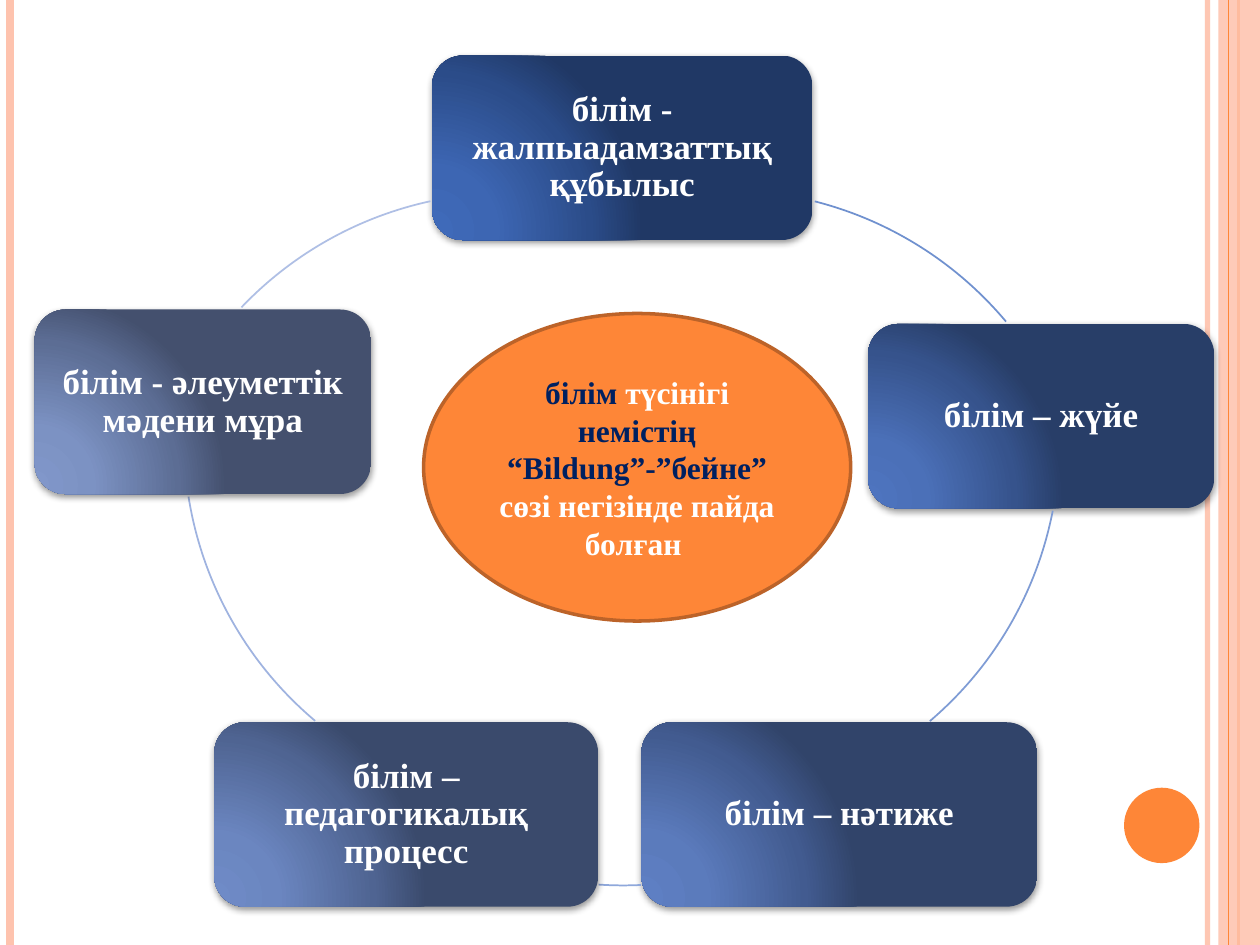
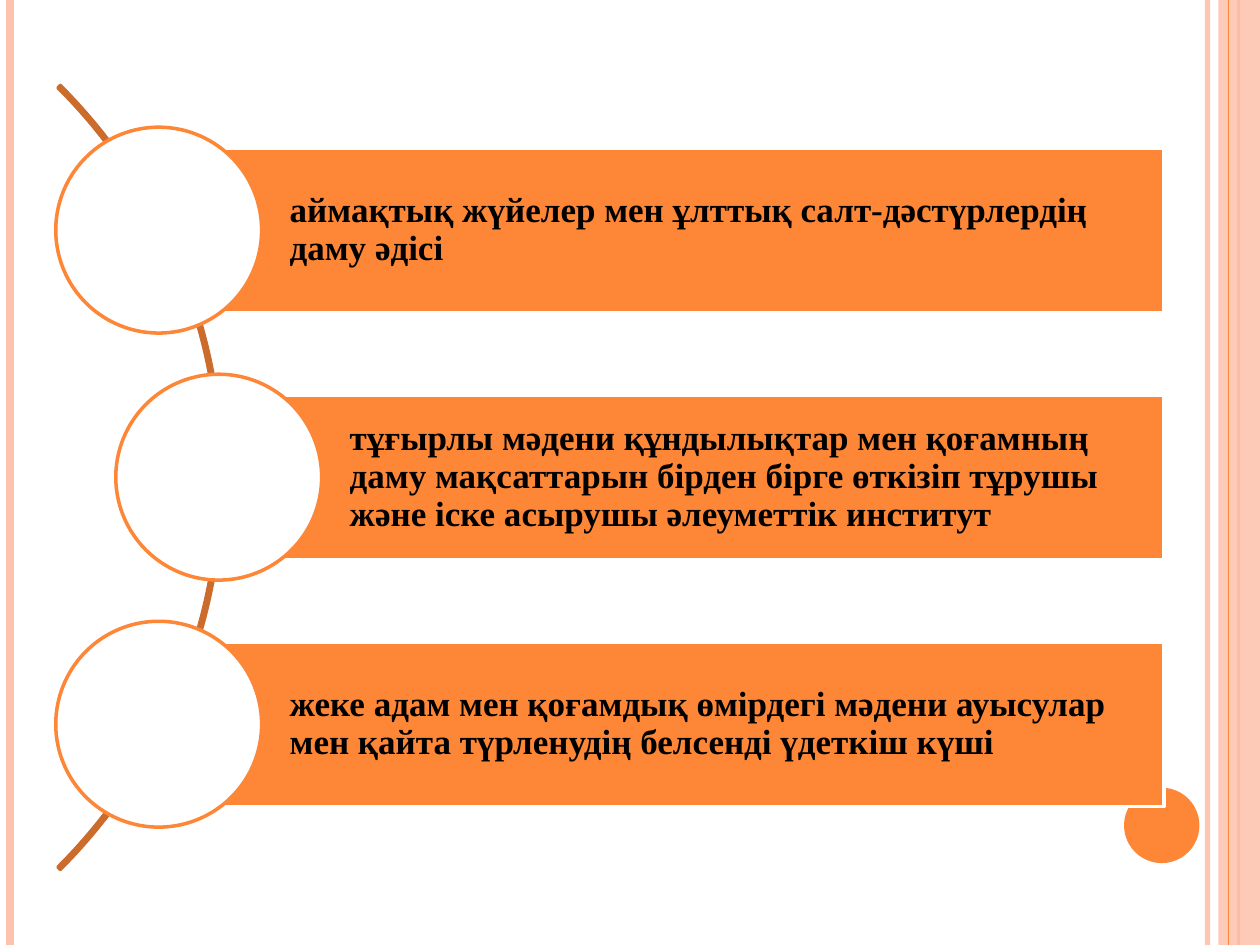
from math import cos, radians, sin, tan

from lxml.etree import SubElement
from pptx import Presentation
from pptx.dml.color import RGBColor
from pptx.enum.shapes import MSO_CONNECTOR, MSO_SHAPE
from pptx.enum.text import MSO_ANCHOR, PP_ALIGN
from pptx.oxml import parse_xml
from pptx.oxml.ns import nsdecls, qn
from pptx.util import Cm, Pt

FONT = "Times New Roman"
WIDTH, HEIGHT = 25.4, 19.05
COLORS = {
    "orange": "FE8637",
    "peach": "FEC3AE",
    "rim": "BC6329",
    "arc": "CB6B2C",
    "navy": "002060",
    "white": "FFFFFF",
    "black": "000000",
}

STRIPES = [
    (24.34, 3, "peach", 93),
    (0.21, 4.5, "peach", 100),
    (24.97, 1.5, "orange", 100),
    (24.77, 0.75, "orange", 100),
]

MEANINGS = [
    ("білім - жалпыадамзаттық құбылыс", 8.71, 1.12, 7.67,
     ("3F6AB9", "3D66B3", "2B4C89", "203865")),
    ("білім – жүйе", 17.5, 6.53, 6.98,
     ("4E74BF", "4B70B8", "36538C", "283E68")),
    ("білім – нəтиже", 12.93, 14.56, 7.98,
     ("5E7FC3", "5B7BBC", "425B90", "31446A")),
    ("білім – педагогикалық процесс", 4.32, 14.56, 7.74,
     ("6F8BC7", "6B86C0", "4F6492", "3A4A6C")),
    ("білім - əлеуметтік мəдени мұра", 0.7, 6.24, 6.78,
     ("8197CA", "7C92C3", "5C6D94", "44506E")),
]
MEANING_HEIGHT = 3.72

RING_DIAMETER = 14.86
RING_ARCS = [
    (7.16, 3.83, -75.7, -40, "7091CF"),
    (6.5, 1.45, 11, 49.6, "7F9CD5"),
    (5.13, 2.99, 87.2, 93.8, "8FA8DB"),
    (3.71, 1.42, 130.1, 171, "9FB3E0"),
    (2.82, 3.89, 223.6, 257.8, "AFBFE5"),
]

CENTRE_RUNS = [
    ("білім ", "navy"),
    ("түсінігі ", "white"),
    ("немістің “Bildung”-”бейне” ", "navy"),
    ("сөзі негізінде пайда болған ", "white"),
]

ROLES = [
    (3.2, "аймақтық жүйелер мен ұлттық салт-дəстүрлердің даму əдісі"),
    (4.41, "тұғырлы мəдени құндылықтар мен қоғамның даму мақсаттарын "
           "бірден бірге өткізіп тұрушы жəне іске асырушы əлеуметтік институт"),
    (3.2, "жеке адам мен қоғамдық өмірдегі мəдени ауысулар "
          "мен қайта түрленудің белсенді үдеткіш күші"),
]
ROLE_MIDDLE, ROLE_PITCH = 9.62, 4.98
BAR_RIGHT, BAR_HEIGHT, CIRCLE = 23.47, 3.32, 4.15


def rgb(color):
    return RGBColor.from_string(COLORS.get(color, color))


def set_alpha(parent, percent):
    for clr in parent.iter(qn("a:srgbClr")):
        SubElement(clr, qn("a:alpha")).set("val", str(percent * 1000))


def style(sp, fill=None, line=None, width=2):
    sp.shadow.inherit = False
    if fill:
        sp.fill.solid()
        sp.fill.fore_color.rgb = rgb(fill)
    else:
        sp.fill.background()
    if line:
        sp.line.color.rgb = rgb(line)
        sp.line.width = Pt(width)
    else:
        sp.line.fill.background()
    return sp


def add_box(slide, kind, x, y, w, h, fill=None, line=None, width=2):
    sp = slide.shapes.add_shape(kind, Cm(x), Cm(y), Cm(w), Cm(h))
    return style(sp, fill, line, width)


def add_stripe(slide, x, width, color, alpha):
    line = slide.shapes.add_connector(
        MSO_CONNECTOR.STRAIGHT, Cm(x), 0, Cm(x), Cm(HEIGHT))
    line.line.color.rgb = rgb(color)
    line.line.width = Pt(width)
    props = line.element.spPr
    if alpha < 100:
        set_alpha(props, alpha)
    SubElement(props, qn("a:effectLst"))
    return line


def add_ring_arc(slide, x, y, start, end, color):
    size = Cm(RING_DIAMETER)
    builder = slide.shapes.build_freeform(Cm(x), Cm(y))
    builder.add_line_segments([(Cm(x) + size, Cm(y) + size)], close=False)
    sp = style(builder.convert_to_shape(), line=color, width=1)
    a, b, r = radians(start), radians(end), size / 2
    k = 4 / 3 * tan((b - a) / 4)
    points = [
        (cos(a), sin(a)),
        (cos(a) - k * sin(a), sin(a) + k * cos(a)),
        (cos(b) + k * sin(b), sin(b) - k * cos(b)),
        (cos(b), sin(b)),
    ]
    outline = next(sp.element.iter(qn("a:path")))
    for child in list(outline):
        outline.remove(child)
    for tag, group in (("a:moveTo", points[:1]), ("a:cubicBezTo", points[1:])):
        step = SubElement(outline, qn(tag))
        for px, py in group:
            pt = SubElement(step, qn("a:pt"))
            pt.set("x", str(round(r + r * px)))
            pt.set("y", str(round(r + r * py)))


def write(sp, runs, size=20, color="white", align=PP_ALIGN.CENTER, spacing=0.9,
          insets=(0.2, 0.2, 0.2, 0.2)):
    tf = sp.text_frame
    tf.word_wrap = True
    tf.vertical_anchor = MSO_ANCHOR.MIDDLE
    tf.margin_left, tf.margin_top, tf.margin_right, tf.margin_bottom = map(Cm, insets)
    p = tf.paragraphs[0]
    p.alignment = align
    p.line_spacing = spacing
    if isinstance(runs, str):
        runs = [(runs, color)]
    for text, run_color in runs:
        r = p.add_run()
        r.text = text
        r.font.name = FONT
        r.font.size = Pt(size)
        r.font.bold = True
        r.font.color.rgb = rgb(run_color)


def add_glow_fill(sp, colors):
    stops = "".join(
        f'<a:gs pos="{pos * 1000}"><a:srgbClr val="{color}"/></a:gs>'
        for pos, color in zip((0, 30, 75, 100), colors))
    gradient = parse_xml(
        f'<a:gradFill {nsdecls("a")} rotWithShape="1"><a:gsLst>{stops}</a:gsLst>'
        '<a:path path="circle"><a:fillToRect l="5000" t="100000" r="120000" '
        'b="10000"/></a:path></a:gradFill>')
    props = sp.element.spPr
    props.replace(props.find(qn("a:noFill")), gradient)


def add_drop_shadow(sp):
    shadow = parse_xml(
        f'<a:outerShdw {nsdecls("a")} blurRad="{Pt(4)}" dist="{Pt(1.6)}" '
        'dir="5400000" rotWithShape="0"><a:srgbClr val="000000">'
        '<a:alpha val="42000"/></a:srgbClr></a:outerShdw>')
    sp.element.spPr.find(qn("a:effectLst")).append(shadow)


def decorate_master(prs, slide):
    parts = [add_stripe(slide, *stripe) for stripe in STRIPES]
    band = add_box(slide, MSO_SHAPE.RECTANGLE, 24.56, 0, 0.84, HEIGHT, "peach")
    set_alpha(band.element.spPr, 87)
    parts.insert(3, band)
    parts.append(add_box(slide, MSO_SHAPE.OVAL, 22.66, 15.88, 1.52, 1.52, "orange"))
    for number, sp in enumerate(parts, 100):
        sp.element.xpath(".//p:cNvPr")[0].set("id", str(number))
        prs.slide_master.shapes.element.append(sp.element)


def add_meaning(slide, text, x, y, w, colors):
    sp = add_box(slide, MSO_SHAPE.ROUNDED_RECTANGLE, x, y, w, MEANING_HEIGHT)
    add_glow_fill(sp, colors)
    add_drop_shadow(sp)
    write(sp, text)


def build_meanings(slide):
    for meaning, ring_arc in zip(MEANINGS, RING_ARCS):
        add_meaning(slide, *meaning)
        add_ring_arc(slide, *ring_arc)
    centre = add_box(slide, MSO_SHAPE.OVAL, 8.54, 6.32, 8.61, 6.2, "orange", "rim")
    write(centre, CENTRE_RUNS, size=18, spacing=1.0, insets=(0.25, 0.13, 0.25, 0.13))


def build_roles(slide):
    spine = add_box(slide, MSO_SHAPE.BLOCK_ARC, -17.86, -1.55, 22.35, 22.35, line="arc")
    for i, value in enumerate((189, 27, 0.003)):
        spine.adjustments[i] = value
    for i, (x, text) in enumerate(ROLES):
        y = ROLE_MIDDLE + (i - 1) * ROLE_PITCH
        bar = add_box(slide, MSO_SHAPE.RECTANGLE, x, y - BAR_HEIGHT / 2,
                      BAR_RIGHT - x, BAR_HEIGHT, "orange", "white")
        write(bar, text, color="black", align=PP_ALIGN.LEFT,
              insets=(2.64, 0.15, 0.15, 0.15))
        add_box(slide, MSO_SHAPE.OVAL, x - CIRCLE / 2, y - CIRCLE / 2,
                CIRCLE, CIRCLE, "white", "orange")


def main():
    prs = Presentation()
    prs.slide_width, prs.slide_height = Cm(WIDTH), Cm(HEIGHT)
    blank = prs.slide_layouts[6]
    meanings = prs.slides.add_slide(blank)
    decorate_master(prs, meanings)
    build_meanings(meanings)
    build_roles(prs.slides.add_slide(blank))
    prs.save("out.pptx")


if __name__ == "__main__":
    main()
